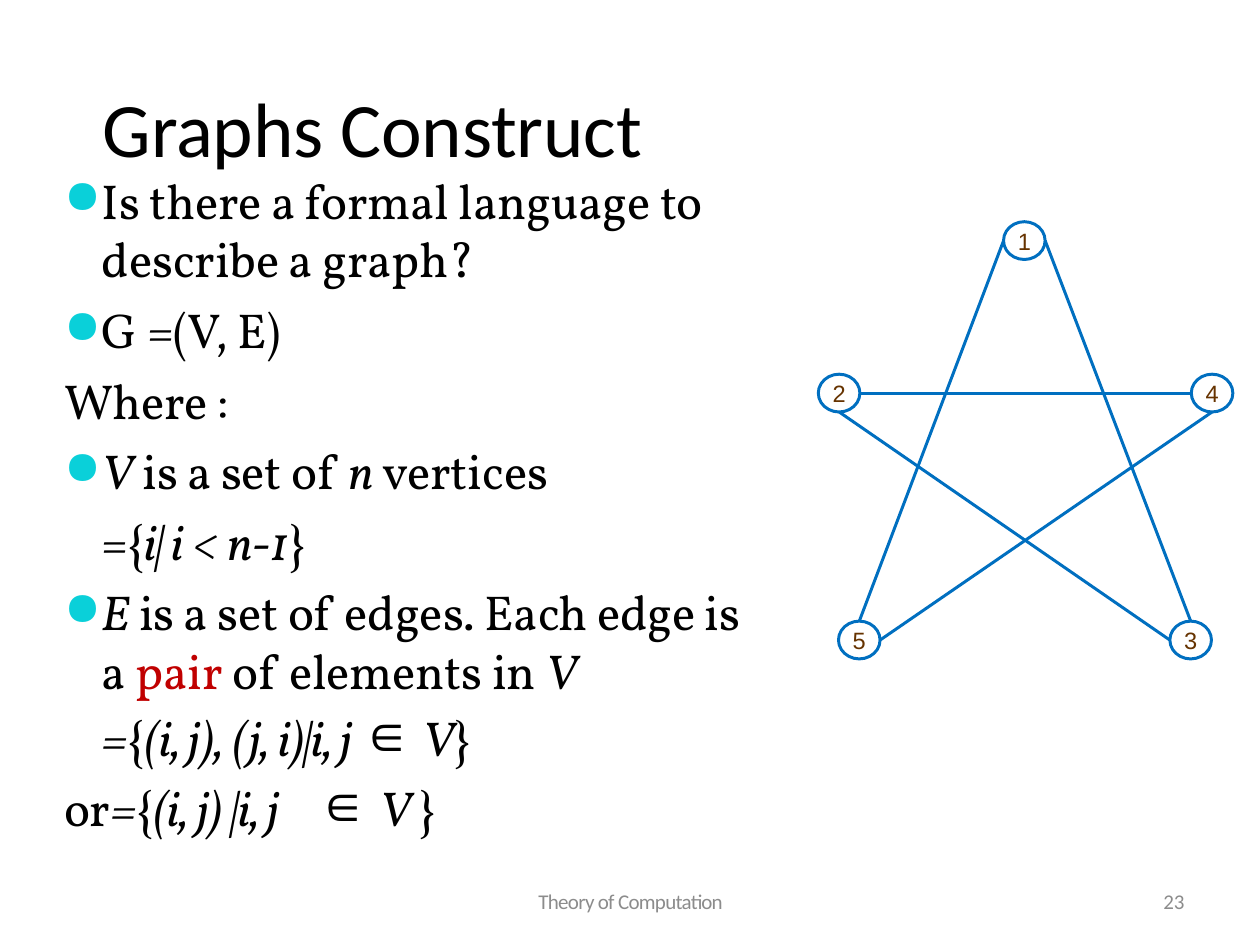
"""Build the slide on graph notation with a five-vertex star."""
from dataclasses import dataclass

from lxml.etree import SubElement as Sub
from pptx import Presentation
from pptx.dml.color import RGBColor
from pptx.enum.shapes import MSO_CONNECTOR as Conn, MSO_SHAPE as Kind
from pptx.enum.text import MSO_ANCHOR as Anchor, PP_ALIGN as Align
from pptx.oxml.ns import qn
from pptx.util import Inches, Pt

BLUE, BROWN, GREY, BLACK = "006FC0", "663300", "8C8C8C", "000000"
WIDE, HIGH = 0.33, 0.3
SIDES = {"top": (0, -HIGH / 2), "left": (-WIDE / 2, 0),
         "bottom": (0, HIGH / 2), "right": (WIDE / 2, 0)}
STYLES = {
    "": {},
    "i": {"italic": True},
    "red": {"color": "C00000"},
    "in": {"font": "Arial", "size": 52.5, "base": 5},
}


@dataclass
class Node:
    name: str
    x: float
    y: float


@dataclass
class Edge:
    start: str
    exit: str
    end: str
    entry: str


@dataclass
class Line:
    runs: list
    before: float
    left: float = 0.31
    bullet: bool = False
    exact: float = 0
    tabs: tuple = ()


NODES = [Node("1", 8.13, 1.91), Node("3", 9.45, 5.08), Node("5", 6.82, 5.08),
         Node("2", 6.66, 3.12), Node("4", 9.62, 3.12)]
EDGES = [Edge("1", "left", "5", "top"), Edge("2", "bottom", "3", "left"),
         Edge("1", "right", "3", "top"), Edge("2", "right", "4", "left"),
         Edge("4", "bottom", "5", "right")]
LINES = [
    Line([("Is there a formal language to describe a graph?", "")], 0.9, bullet=True),
    Line([("G =(V, E)", "")], 6.8, bullet=True),
    Line([("Where :", "")], 6.7, 0.01),
    Line([("V ", "i"), ("is a set of ", ""), ("n ", "i"), ("vertices", "")],
         6.6, bullet=True),
    Line([("={", ""), ("i| i < n-1", "i"), ("}", "")], 6.8),
    Line([("E ", "i"), ("is a set of edges. Each edge is a ", ""), ("pair ", "red"),
          ("of elements in ", ""), ("V", "i")], 6.7, bullet=True),
    Line([("=", "i"), ("{", ""), ("(i, j), (j, i)|i, j ", "i"), ("∈", "in"),
          (" V", "i"), ("}", "")], 2.5, exact=40.3),
    Line([("or", ""), ("=", "i"), ("{", ""), ("(i, j) |i, j\t", "i"), ("∈", "in"),
          ("\tV ", "i"), ("}", "")], 0, 0.01, exact=40.3, tabs=(2.08, 3.01)),
]


def tint(code: str) -> RGBColor:
    """Turn a hex string into a colour."""
    return RGBColor.from_string(code)


def write(para, text: str, size: float = 28, font: str = "Vollkorn",
          color: str = BLACK, italic: bool = False, base: int = 0,
          gap: float = 0) -> None:
    """Add one formatted run to a paragraph."""
    run = para.add_run()
    run.text = text
    face = run.font
    face.size, face.name, face.italic = Pt(size), font, italic
    face.color.rgb = tint(color)
    props = run._r.get_or_add_rPr()
    if base:
        props.set("baseline", str(base * 1000))
    if gap:
        props.set("spc", str(round(gap * 100)))


def setup(shape, anchor=Anchor.TOP, top: float = 0, right: float = 0,
          wrap: bool = True):
    """Set the margins of a text frame and return the frame."""
    frame = shape.text_frame
    frame.word_wrap, frame.vertical_anchor = wrap, anchor
    frame.margin_left = frame.margin_bottom = 0
    frame.margin_top, frame.margin_right = Inches(top), Inches(right)
    return frame


def add_box(slide, x: float, y: float, w: float, h: float):
    """Add a text box with lengths in inches."""
    return slide.shapes.add_textbox(Inches(x), Inches(y), Inches(w), Inches(h))


def add_title(slide, text: str) -> None:
    """Move and fill the title placeholder."""
    title = slide.shapes.title
    title.left, title.top = Inches(0.74), Inches(0.61)
    title.width, title.height = Inches(4.43), Inches(0.78)
    para = setup(title, Anchor.MIDDLE, 0.01).paragraphs[0]
    para.alignment, para.space_before = Align.CENTER, Pt(1)
    write(para, text, size=44, font="Calibri", gap=-0.1)


def add_foot(slide, text: str, x: float, w: float, align, right: float = 0,
             gap: float = 0) -> None:
    """Add a grey text at the foot of the slide."""
    box = add_box(slide, x, 6.95, w, 0.4)
    para = setup(box, Anchor.MIDDLE, right=right).paragraphs[0]
    para.alignment = align
    write(para, text, size=12, font="Calibri", color=GREY, gap=gap)


def add_node(slide, node: Node) -> None:
    """Draw one numbered vertex."""
    oval = slide.shapes.add_shape(Kind.OVAL, Inches(node.x - WIDE / 2),
                                  Inches(node.y - HIGH / 2), Inches(WIDE), Inches(HIGH))
    oval.shadow.inherit = False
    oval.fill.background()
    oval.line.color.rgb, oval.line.width = tint(BLUE), Pt(1.7)
    para = setup(oval, Anchor.MIDDLE, wrap=False).paragraphs[0]
    para.alignment = Align.CENTER
    write(para, node.name, size=13.5, font="Arial", color=BROWN, gap=0.8)


def add_edge(slide, edge: Edge, nodes: dict) -> None:
    """Draw one edge between the sides of two vertices."""
    ends = []
    for name, side in ((edge.start, edge.exit), (edge.end, edge.entry)):
        dx, dy = SIDES[side]
        ends += [Inches(nodes[name].x + dx), Inches(nodes[name].y + dy)]
    link = slide.shapes.add_connector(Conn.STRAIGHT, *ends)
    link.line.color.rgb, link.line.width = tint(BLUE), Pt(1.7)
    Sub(link._element.spPr, qn("a:effectLst"))


def add_line(para, line: Line) -> None:
    """Fill one paragraph of the body."""
    para.space_before = Pt(line.before)
    if line.exact:
        para.line_spacing = Pt(line.exact)
    props = para._p.get_or_add_pPr()
    props.set("marL", str(Inches(line.left)))
    props.set("indent", str(Inches(-0.3 if line.bullet else 0)))
    if line.bullet:
        Sub(Sub(props, qn("a:buClr")), qn("a:srgbClr"), val="0AD0D9")
        Sub(props, qn("a:buSzPct"), val="95000")
        Sub(props, qn("a:buChar"), char="●")
    if line.tabs:
        stops = Sub(props, qn("a:tabLst"))
        for stop in line.tabs:
            Sub(stops, qn("a:tab"), pos=str(Inches(stop)), algn="l")
    for text, style in line.runs:
        write(para, text, **{"gap": -0.1, **STYLES[style]})


def add_body(slide) -> None:
    """Add the text on the left."""
    frame = setup(add_box(slide, 0.5, 1.34, 5.66, 5.37), top=0.01, right=0.11)
    for i, line in enumerate(LINES):
        add_line(frame.add_paragraph() if i else frame.paragraphs[0], line)


def main() -> None:
    """Build and save the slide."""
    deck = Presentation()
    deck.slide_width, deck.slide_height = Inches(10), Inches(7.5)
    slide = deck.slides.add_slide(deck.slide_layouts[5])
    add_title(slide, "Graphs Construct")
    add_foot(slide, "Theory of Computation", 3.42, 3.17, Align.CENTER, gap=-0.4)
    add_foot(slide, "23", 7.17, 2.33, Align.RIGHT, right=0.1)
    for node in NODES:
        add_node(slide, node)
    nodes = {node.name: node for node in NODES}
    for edge in EDGES:
        add_edge(slide, edge, nodes)
    add_body(slide)
    deck.save("out.pptx")


if __name__ == "__main__":
    main()
